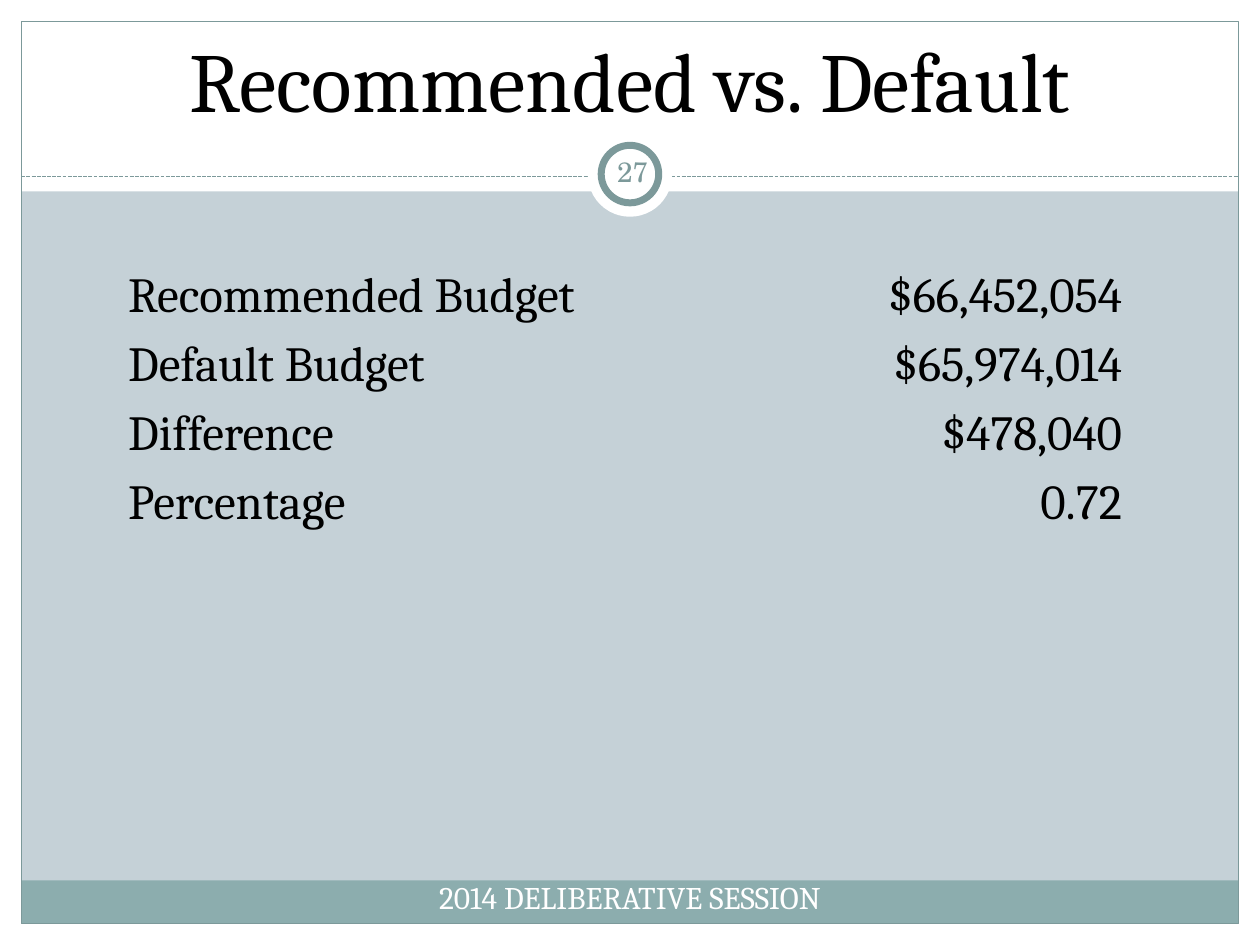
from dataclasses import dataclass

from lxml import etree
from pptx import Presentation, util as u
from pptx.dml.color import RGBColor
from pptx.enum import dml, shapes, text
from pptx.oxml.ns import qn


@dataclass(frozen=True)
class Theme:
    ink: str = "000000"
    paper: str = "FFFFFF"
    ground: str = "C5D1D7"
    band: str = "8CADAE"
    edge: str = "7C999A"
    font: str = "Cambria"
    number_font: str = "TeX Gyre Schola"
    title_size: int = 48
    table_size: int = 28
    footer_size: int = 18
    number_size: int = 16


@dataclass(frozen=True)
class Area:
    """Left, top, width and height in centimetres."""
    left: float
    top: float
    width: float
    height: float

    def lengths(self) -> tuple:
        return tuple(u.Cm(v) for v in (self.left, self.top, self.width, self.height))


@dataclass(frozen=True)
class Panel:
    area: Area
    fill: str | None = None
    line: str | None = None
    weight: float = 0.75
    kind: shapes.MSO_SHAPE = shapes.MSO_SHAPE.RECTANGLE


@dataclass(frozen=True)
class BudgetRow:
    label: str
    value: str


THEME = Theme()
WIDTH, HEIGHT, MARGIN = 25.4, 19.05, 0.43
HEADER_HEIGHT, RULE_Y = 3.86, 3.56
INNER_WIDTH = WIDTH - 2 * MARGIN
OVAL = shapes.MSO_SHAPE.OVAL

FRAME = [
    Panel(Area(0, HEIGHT - MARGIN, WIDTH, MARGIN), THEME.paper),
    Panel(Area(0, 0, WIDTH, HEADER_HEIGHT), THEME.paper),
    Panel(Area(0, 0, MARGIN, HEIGHT), THEME.paper),
    Panel(Area(WIDTH - MARGIN, 0, MARGIN, HEIGHT), THEME.paper),
    Panel(Area(MARGIN, 17.75, INNER_WIDTH, 0.87), THEME.band),
    Panel(Area(MARGIN, MARGIN, INNER_WIDTH, HEIGHT - 2 * MARGIN), line=THEME.edge),
]
BADGE = [
    Panel(Area(11.85, 2.67, 1.7, 1.7), THEME.paper, kind=OVAL),
    Panel(Area(12.12, 2.93, 1.16, 1.16), THEME.paper, THEME.edge, 4, OVAL),
]
ROWS = [
    BudgetRow("Recommended Budget", "$66,452,054"),
    BudgetRow("Default Budget", "$65,974,014"),
    BudgetRow("Difference", "$478,040"),
    BudgetRow("Percentage", "0.72"),
]


def color(value: str) -> RGBColor:
    return RGBColor.from_string(value)


def draw_panel(page, panel: Panel) -> None:
    shape = page.shapes.add_shape(panel.kind, *panel.area.lengths())
    shape.shadow.inherit = False
    if panel.fill:
        shape.fill.solid()
        shape.fill.fore_color.rgb = color(panel.fill)
    else:
        shape.fill.background()
    if panel.line:
        shape.line.color.rgb = color(panel.line)
        shape.line.width = u.Pt(panel.weight)
    else:
        shape.line.fill.background()


def draw_rule(page) -> None:
    rule = page.shapes.add_connector(
        shapes.MSO_CONNECTOR.STRAIGHT, u.Cm(MARGIN), u.Cm(RULE_Y),
        u.Cm(WIDTH - MARGIN), u.Cm(RULE_Y))
    rule.line.color.rgb = color(THEME.edge)
    rule.line.width = u.Pt(0.75)
    rule.line.dash_style = dml.MSO_LINE.SQUARE_DOT
    etree.SubElement(rule._element.spPr, qn("a:effectLst"))


def write(frame, words: str, size: int, ink: str = THEME.ink,
          font: str = THEME.font, align=text.PP_ALIGN.CENTER) -> None:
    para = frame.paragraphs[0]
    para.alignment = align
    span = para.add_run()
    span.text = words
    span.font.size = u.Pt(size)
    span.font.name = font
    span.font.color.rgb = color(ink)


def place_title(page, words: str) -> None:
    """Fill the title placeholder and bring it in front of the header band."""
    title = page.shapes.title
    title.left, title.top, title.width, title.height = Area(0.85, 0.64, 23.7, 2.1).lengths()
    title.text_frame.auto_size = text.MSO_AUTO_SIZE.NONE
    title.text_frame.vertical_anchor = text.MSO_ANCHOR.BOTTOM
    write(title.text_frame, words, THEME.title_size)
    page.shapes._spTree.append(title._element)


def clear_cell(cell) -> None:
    """Remove the borders and fill that the table style gives."""
    properties = cell._tc.get_or_add_tcPr()
    for side in ("L", "R", "T", "B"):
        border = etree.SubElement(properties, qn(f"a:ln{side}"), w="0")
        etree.SubElement(border, qn("a:noFill"))
    cell.fill.background()


def draw_table(page, rows: list[BudgetRow]) -> None:
    area = Area(2.33, 5.28, 20.54, 1.39 * len(rows))
    table = page.shapes.add_table(len(rows), 2, *area.lengths()).table
    table.first_row = table.horz_banding = False
    for column, width in zip(table.columns, (12.11, 8.43)):
        column.width = u.Cm(width)
    for index, row in enumerate(rows):
        for column, (words, align) in enumerate((
                (row.label, text.PP_ALIGN.LEFT), (row.value, text.PP_ALIGN.RIGHT))):
            cell = table.cell(index, column)
            clear_cell(cell)
            write(cell.text_frame, words, THEME.table_size, align=align)


def add_box(page, area: Area):
    box = page.shapes.add_textbox(*area.lengths())
    box.text_frame.word_wrap = True
    return box.text_frame


def main() -> None:
    deck = Presentation()
    deck.slide_width, deck.slide_height = u.Cm(WIDTH), u.Cm(HEIGHT)
    page = deck.slides.add_slide(deck.slide_layouts[5])
    page.background.fill.solid()
    page.background.fill.fore_color.rgb = color(THEME.ground)

    for panel in FRAME:
        draw_panel(page, panel)
    draw_rule(page)
    for panel in BADGE:
        draw_panel(page, panel)
    place_title(page, "Recommended vs. Default")
    draw_table(page, ROWS)

    footer = add_box(page, Area(MARGIN, 17.58, INNER_WIDTH, 1.02))
    write(footer, "2014 DELIBERATIVE SESSION", THEME.footer_size, THEME.paper)

    number = add_box(page, Area(12.12, 2.84, 1.27, 1.22))
    number.vertical_anchor = text.MSO_ANCHOR.MIDDLE
    number.margin_left = number.margin_right = u.Cm(0.13)
    number.margin_top = number.margin_bottom = u.Cm(0.13)
    write(number, "27", THEME.number_size, THEME.edge, THEME.number_font)

    deck.save("out.pptx")


if __name__ == "__main__":
    main()
